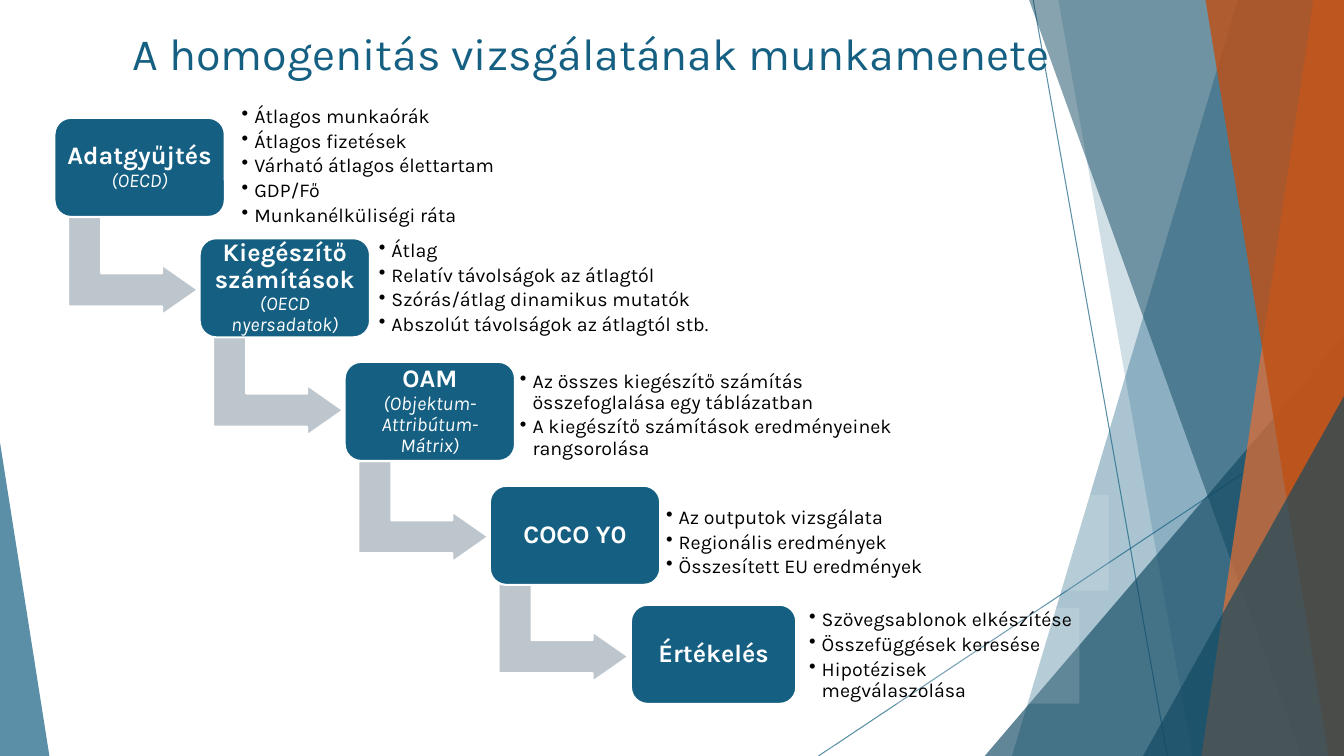
import lxml.etree
import pptx
import pptx.dml.color
import pptx.enum.shapes
import pptx.enum.text
import pptx.oxml.ns
import pptx.util

Pt = pptx.util.Pt
qn = pptx.oxml.ns.qn
SHAPES = pptx.enum.shapes.MSO_SHAPE
ALIGN = pptx.enum.text.PP_ALIGN
ANCHOR = pptx.enum.text.MSO_ANCHOR

WIDTH, HEIGHT = 960, 540
COLORS = {
    "blue": "156082",
    "dark_blue": "104862",
    "orange": "E97132",
    "dark_orange": "C04F15",
    "gray": "BDC5CD",
    "white": "FFFFFF",
    "black": "000000",
}

FACETS = [
    (884.2, 722.9, "blue", 36),
    (756, 851.8, "blue", 20),
    (703.4, 239.8, 256.6, 300.2, 1, "dark_blue", 66),
    (735.1, 929.5, "dark_blue", 50),
    (938.2, 858.2, "orange", 70),
    (861.1, 949, "dark_orange", 80),
    (816.5, 283, 143.5, 257, 1, "dark_blue", 66),
    (0, 316.1, 35.3, 223.9, 0, "blue", 70),
]

STEPS = [
    {"box": (38.9, 84.2, 121.7), "arrow": (59, 142.6),
     "name": "Adatgyűjtés", "detail": "(OECD)",
     "list": (168.5, 76.3, 263.5, 85),
     "items": ["Átlagos munkaórák", "Átlagos fizetések", "Várható átlagos élettartam",
               "GDP/Fő", "Munkanélküliségi ráta"]},
    {"box": (142.6, 170.2, 121.7), "arrow": (162.7, 228.6),
     "name": "Kiegészítő számítások", "detail": "(OECD nyersadatok)",
     "list": (266.4, 159.8, 255.6, 92.2),
     "items": ["Átlag", "Relatív távolságok az átlagtól", "Szórás/átlag dinamikus mutatók",
               "Abszolút távolságok az átlagtól stb."]},
    {"box": (246.2, 258.5, 121.7), "arrow": (266.4, 319),
     "name": "OAM", "detail": "(Objektum-Attribútum-Mátrix)",
     "list": (367.2, 254.9, 300.2, 83.5),
     "items": ["Az összes kiegészítő számítás összefoglalása egy táblázatban",
               "A kiegészítő számítások eredményeinek rangsorolása"]},
    {"box": (349.9, 347, 121.7), "arrow": (366.5, 404.6),
     "name": "COCO Y0", "list": (471.6, 353.5, 320.4, 68.4), "veil": 15,
     "items": ["Az outputok vizsgálata", "Regionális eredmények", "Összesített EU eredmények"]},
    {"box": (450.7, 432, 118.1),
     "name": "Értékelés", "list": (573.8, 434.2, 197.3, 68.4), "veil": 15,
     "items": ["Szövegsablonok elkészítése", "Összefüggések keresése",
               "Hipotézisek megválaszolása"]},
]


def rgb(name):
    return pptx.dml.color.RGBColor.from_string(COLORS[name])


def paint(fill, color, opacity=100):
    fill.solid()
    fill.fore_color.rgb = rgb(color)
    if opacity < 100:
        set_opacity(fill.fore_color, fill, opacity)


def set_opacity(color_format, fill, opacity):
    color_element = fill._xPr.find(qn("a:solidFill"))[0]
    lxml.etree.SubElement(color_element, qn("a:alpha"), val=str(opacity * 1000))


def style_shape(shape, color, opacity=100, outlined=False):
    shape.shadow.inherit = False
    paint(shape.fill, color, opacity)
    if outlined:
        paint(shape.line.fill, "white")
        shape.line.width = Pt(1.5)
    else:
        shape.line.fill.background()


def add_preset(slide, kind, left, top, width, height, color, **style):
    shape = slide.shapes.add_shape(kind, Pt(left), Pt(top), Pt(width), Pt(height))
    style_shape(shape, color, **style)
    return shape


def add_text(paragraph, text, size=14, color="black", bold=False, italic=False):
    run = paragraph.add_run()
    run.text = text
    run.font.name = "Karla"
    run.font.size = Pt(size)
    run.font.bold = bold
    run.font.italic = italic
    run.font.color.rgb = rgb(color)


def set_frame(frame, inset, anchor=ANCHOR.MIDDLE):
    frame.word_wrap = True
    frame.auto_size = pptx.enum.text.MSO_AUTO_SIZE.NONE
    frame.vertical_anchor = anchor
    frame.margin_left = frame.margin_right = Pt(inset)
    frame.margin_top = frame.margin_bottom = Pt(inset)


def add_line(slide, start, end):
    line = slide.shapes.add_connector(
        pptx.enum.shapes.MSO_CONNECTOR.STRAIGHT, *(Pt(value) for value in start + end))
    paint(line.line.fill, "blue", 70)
    line.line.width = Pt(0.75)
    lxml.etree.SubElement(line.element.spPr, qn("a:effectLst"))


def add_facet(slide, top_x, bottom_x, color, opacity):
    builder = slide.shapes.build_freeform(Pt(top_x), Pt(0))
    corners = [(WIDTH, 0), (WIDTH, HEIGHT), (bottom_x, HEIGHT)]
    builder.add_line_segments([(Pt(x), Pt(y)) for x, y in corners], close=True)
    style_shape(builder.convert_to_shape(), color, opacity)


def add_triangle(slide, left, top, width, height, apex, color, opacity):
    triangle = add_preset(slide, SHAPES.ISOSCELES_TRIANGLE, left, top, width, height,
                          color, opacity=opacity)
    triangle.adjustments[0] = apex


def add_background(slide):
    add_line(slide, (738, 0), (833.8, HEIGHT))
    add_line(slide, (WIDTH, 290.2), (584.6, HEIGHT))
    for facet in FACETS:
        add = add_facet if len(facet) == 4 else add_triangle
        add(slide, *facet)


def format_title(title, text):
    title.left, title.top, title.width, title.height = Pt(87.8), Pt(15.1), Pt(686.9), Pt(79.2)
    set_frame(title.text_frame, 7.2, ANCHOR.TOP)
    title.text_frame.margin_top = Pt(3.6)
    paragraph = title.text_frame.paragraphs[0]
    paragraph.alignment = ALIGN.LEFT
    add_text(paragraph, text, size=32, color="blue")
    title.element.getparent().append(title.element)


def add_arrow(slide, left, top):
    arrow = add_preset(slide, SHAPES.BENT_UP_ARROW, left, top, 72, 92.9, "gray", outlined=True)
    arrow.rotation = 90
    for index, value in enumerate((0.328, 0.25, 0.358)):
        arrow.adjustments[index] = value


def add_box(slide, left, top, width, name, detail):
    box = add_preset(slide, SHAPES.ROUNDED_RECTANGLE, left, top, width, 70.8, "blue",
                     outlined=True)
    set_frame(box.text_frame, 5)
    paragraph = box.text_frame.paragraphs[0]
    paragraph.alignment = ALIGN.CENTER
    paragraph.line_spacing = 0.9
    add_text(paragraph, name, size=18, color="white", bold=True)
    if detail:
        paragraph.add_line_break()
        add_text(paragraph, detail, color="white", italic=True)


def add_list(slide, area, items, veil):
    text_box = slide.shapes.add_textbox(*(Pt(value) for value in area))
    if veil:
        paint(text_box.fill, "white", veil)
    frame = text_box.text_frame
    set_frame(frame, 4.2)
    for index, item in enumerate(items):
        paragraph = frame.add_paragraph() if index else frame.paragraphs[0]
        paragraph.alignment = ALIGN.LEFT
        paragraph.line_spacing = 0.9
        paragraph.space_after = Pt(2.5)
        properties = paragraph._p.get_or_add_pPr()
        properties.set("marL", str(Pt(9)))
        properties.set("indent", str(-Pt(9)))
        lxml.etree.SubElement(properties, qn("a:buChar"), char="•")
        add_text(paragraph, item)


def main():
    presentation = pptx.Presentation()
    presentation.slide_width, presentation.slide_height = Pt(WIDTH), Pt(HEIGHT)
    slide = presentation.slides.add_slide(presentation.slide_layouts[5])
    add_background(slide)
    format_title(slide.shapes.title, "A homogenitás vizsgálatának munkamenete")
    for step in STEPS:
        if "arrow" in step:
            add_arrow(slide, *step["arrow"])
        add_box(slide, *step["box"], step["name"], step.get("detail"))
        add_list(slide, step["list"], step["items"], step.get("veil"))
    presentation.save("out.pptx")


if __name__ == "__main__":
    main()
